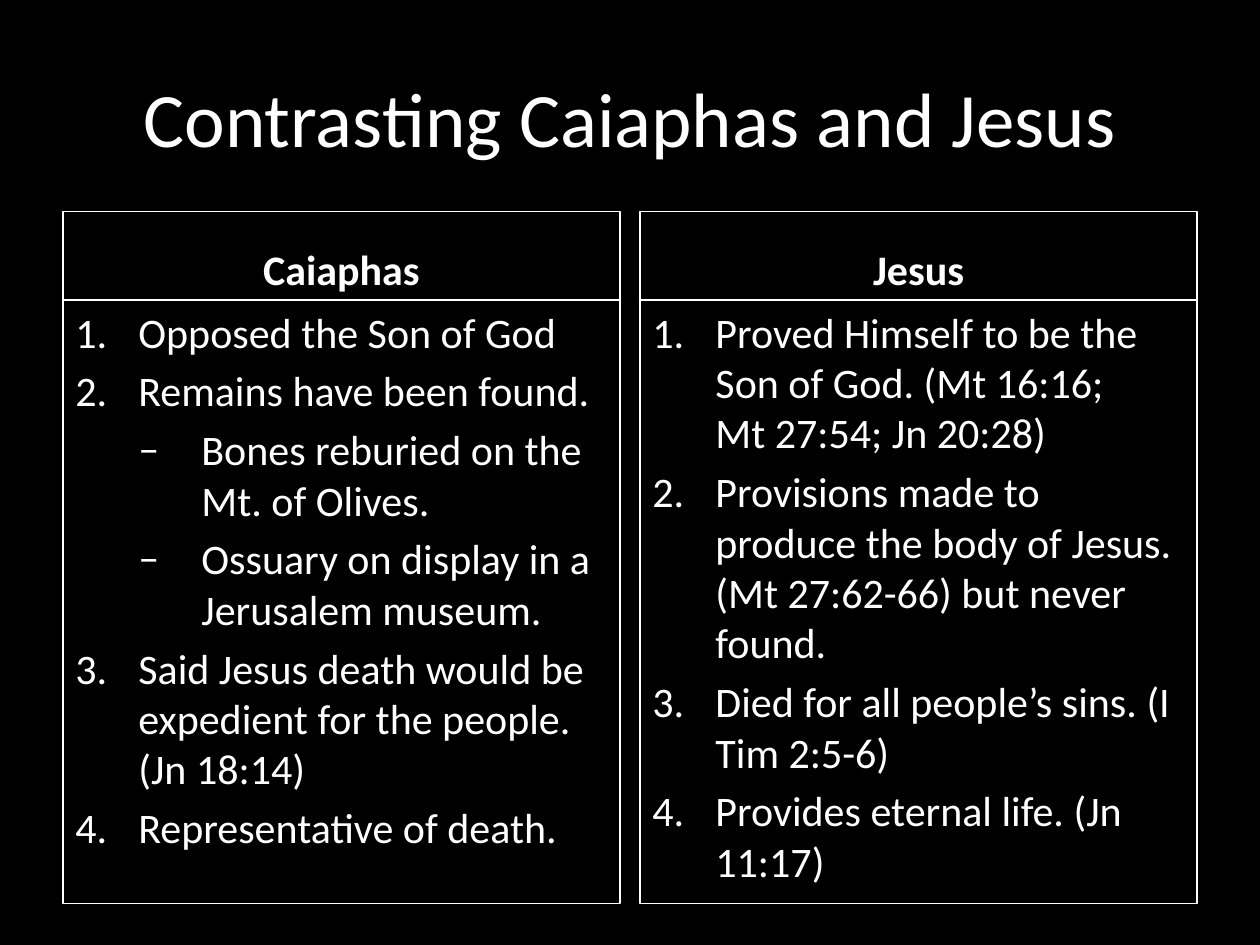
import pptx
import pptx.dml.color
import pptx.enum.text
import pptx.oxml.ns
import pptx.util
from lxml import etree
from pptx.util import Inches

COLORS = {"background": "000000", "foreground": "FFFFFF"}
FONT = "Calibri"
COLUMN_WIDTH = 4.42
HEADING_TOP, HEADING_HEIGHT = 1.68, 0.7
LIST_HEIGHT = 4.79
INDENT = 0.5

# Each column: left edge, heading, heading line width, (level, text) items.
COLUMNS = [
    (0.5, "Caiaphas", 1, [
        (0, "Opposed the Son of God"),
        (0, "Remains have been found."),
        (1, "Bones reburied on the Mt. of Olives."),
        (1, "Ossuary on display in a Jerusalem museum."),
        (0, "Said Jesus death would be expedient for the people. (Jn 18:14)"),
        (0, "Representative of death."),
    ]),
    (5.08, "Jesus", 0.75, [
        (0, "Proved Himself to be the Son of God. (Mt 16:16;\vMt 27:54; Jn 20:28)"),
        (0, "Provisions made to produce the body of Jesus. (Mt 27:62-66) but never found."),
        (0, "Died for all people’s sins. (I Tim 2:5-6)"),
        (0, "Provides eternal life. (Jn 11:17)"),
    ]),
]


def color(name):
    return pptx.dml.color.RGBColor.from_string(COLORS[name])


def format_runs(paragraph, size, bold=False):
    for run in paragraph.runs:
        run.font.name = FONT
        run.font.size = pptx.util.Pt(size)
        run.font.bold = bold
        run.font.color.rgb = color("foreground")


def add_title(slide, text):
    title = slide.shapes.title
    title.left, title.top = Inches(0.5), Inches(0.3)
    title.width, title.height = Inches(9), Inches(1.25)
    title.text_frame.text = text
    title.text_frame.vertical_anchor = pptx.enum.text.MSO_ANCHOR.MIDDLE
    paragraph = title.text_frame.paragraphs[0]
    paragraph.alignment = pptx.enum.text.PP_ALIGN.CENTER
    format_runs(paragraph, 44)


def add_outlined_box(slide, left, top, height, line_width, lines):
    box = slide.shapes.add_textbox(
        Inches(left), Inches(top), Inches(COLUMN_WIDTH), Inches(height))
    box.line.color.rgb = color("foreground")
    box.line.width = pptx.util.Pt(line_width)
    frame = box.text_frame
    frame.word_wrap = True
    frame.text = "\n".join(lines)
    for paragraph in frame.paragraphs:
        paragraph.space_before = pptx.util.Pt(4.8)
    return frame


def add_heading(slide, left, text, line_width):
    frame = add_outlined_box(
        slide, left, HEADING_TOP, HEADING_HEIGHT, line_width, [text])
    frame.vertical_anchor = pptx.enum.text.MSO_ANCHOR.BOTTOM
    paragraph = frame.paragraphs[0]
    paragraph.alignment = pptx.enum.text.PP_ALIGN.CENTER
    format_runs(paragraph, 24, bold=True)


def set_marker(paragraph, level):
    """Number the top level and put a dash before the second one."""
    paragraph.level = level
    properties = paragraph._p.get_or_add_pPr()
    properties.set("marL", str(Inches(INDENT * (level + 1))))
    properties.set("indent", str(-Inches(INDENT)))
    qn = pptx.oxml.ns.qn
    etree.SubElement(properties, qn("a:buFont"), typeface=FONT)
    if level == 0:
        etree.SubElement(properties, qn("a:buAutoNum"), type="arabicPeriod")
    else:
        etree.SubElement(properties, qn("a:buChar"), char="–")


def add_list(slide, left, items):
    frame = add_outlined_box(
        slide, left, HEADING_TOP + HEADING_HEIGHT, LIST_HEIGHT, 0.75,
        [text for _, text in items])
    for paragraph, (level, _) in zip(frame.paragraphs, items):
        set_marker(paragraph, level)
        format_runs(paragraph, 24)


def main():
    presentation = pptx.Presentation()
    presentation.slide_width = Inches(10)
    presentation.slide_height = Inches(7.5)
    slide = presentation.slides.add_slide(presentation.slide_layouts[5])
    slide.background.fill.solid()
    slide.background.fill.fore_color.rgb = color("background")

    add_title(slide, "Contrasting Caiaphas and Jesus")
    for left, heading, line_width, items in COLUMNS:
        add_heading(slide, left, heading, line_width)
        add_list(slide, left, items)
    presentation.save("out.pptx")


if __name__ == "__main__":
    main()
